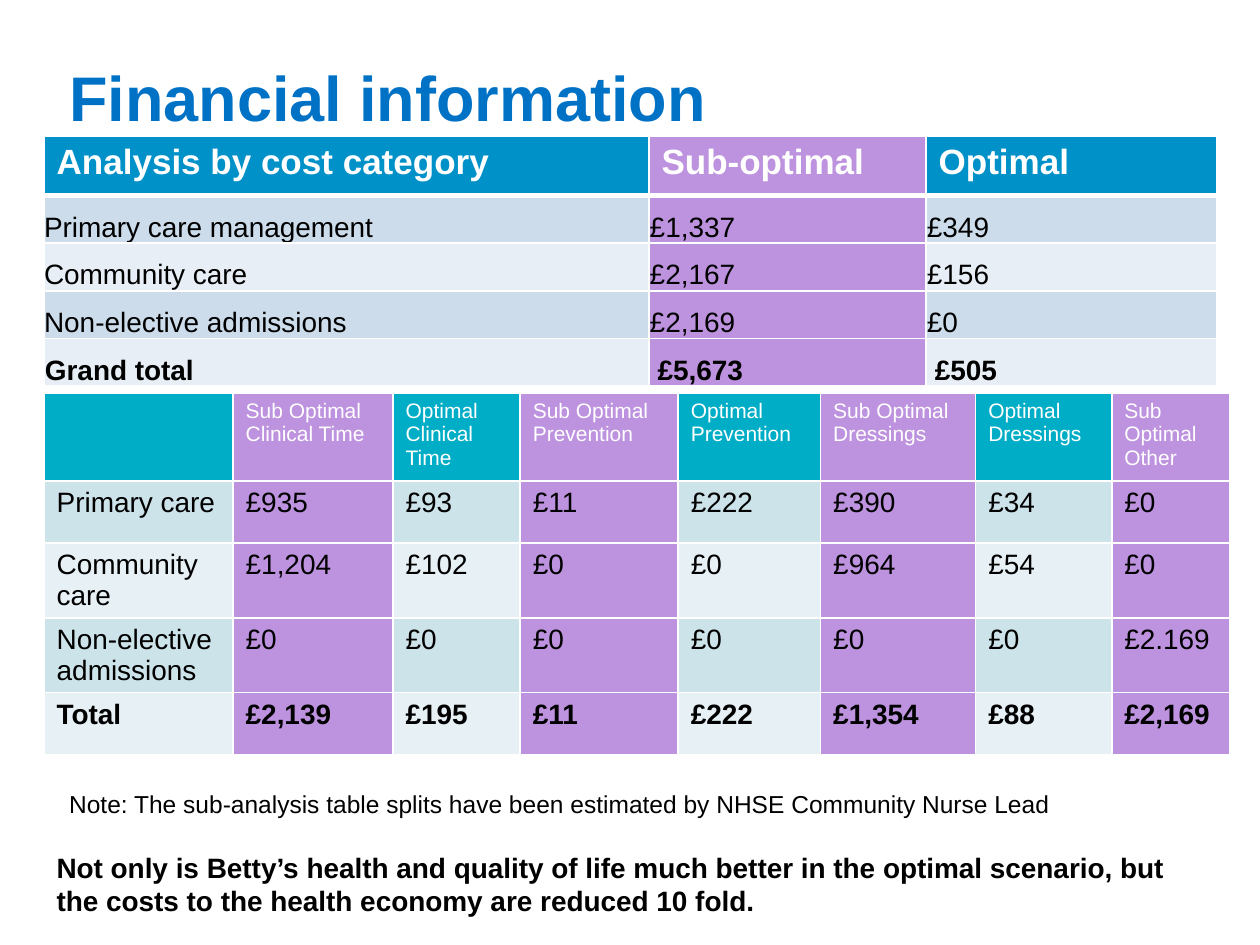
from dataclasses import dataclass

from lxml.etree import SubElement
from pptx import Presentation
from pptx.dml.color import RGBColor
from pptx.enum.text import MSO_ANCHOR, PP_ALIGN
from pptx.oxml.ns import qn
from pptx.util import Pt


@dataclass(frozen=True)
class Theme:
    face: str = "Arial"
    title: str = "0072C6"
    blue: str = "0091C9"
    teal: str = "00ADC6"
    lilac: str = "BD92DE"
    blues: tuple = ("CCDCEB", "E7EEF5")
    teals: tuple = ("CCE3EA", "E7F1F5")
    white: str = "FFFFFF"
    black: str = "000000"
    huge: int = 36
    large: int = 20
    mid: int = 16
    note: int = 14
    small: int = 12


T = Theme()

COSTS = [
    ["Analysis by cost category", "Sub-optimal", "Optimal"],
    ["Primary care management", "£1,337", "£349"],
    ["Community care", "£2,167", "£156"],
    ["Non-elective admissions", "£2,169", "£0"],
    ["Grand total", "£5,673", "£505"],
]
SPLITS = [
    ["", "Sub Optimal Clinical Time", "Optimal Clinical Time",
     "Sub Optimal Prevention", "Optimal Prevention",
     "Sub Optimal Dressings", "Optimal Dressings", "Sub Optimal Other"],
    ["Primary care", "£935", "£93", "£11", "£222", "£390", "£34", "£0"],
    ["Community care", "£1,204", "£102", "£0", "£0", "£964", "£54", "£0"],
    ["Non-elective admissions", "£0", "£0", "£0", "£0", "£0", "£0", "£2.169"],
    ["Total", "£2,139", "£195", "£11", "£222", "£1,354", "£88", "£2,169"],
]


def assign(item, **form):
    for name, value in form.items():
        setattr(item, name, value)


def write(frame, text, size, color, bold=False):
    para = frame.paragraphs[0]
    para.alignment = PP_ALIGN.LEFT
    font = para.font
    if text:
        run = para.add_run()
        run.text = text
        font = run.font
    assign(font, name=T.face, size=Pt(size), bold=bold)
    font.color.rgb = RGBColor.from_string(color)


def place(shape, left, top, width, height):
    assign(shape, left=Pt(left), top=Pt(top), width=Pt(width), height=Pt(height))


def add_title(slide, text):
    shape = slide.shapes.title
    place(shape, 32.4, 28.8, 579.6, 52.6)
    shape.text_frame.vertical_anchor = MSO_ANCHOR.MIDDLE
    write(shape.text_frame, text, T.huge, T.title, True)


def add_text(slide, box, text, size, bold=False):
    frame = slide.shapes.add_textbox(*map(Pt, box)).text_frame
    frame.word_wrap = True
    write(frame, text, size, T.black, bold)


def edge(cell, **sides):
    props = cell._tc.get_or_add_tcPr()
    for side, width in sides.items():
        line = SubElement(props, qn(f"a:ln{side}"), w=str(Pt(width)))
        fill = SubElement(line, qn("a:solidFill"))
        SubElement(fill, qn("a:srgbClr"), val=T.white)


def add_grid(slide, spot, cols, rows, data, head, bands, size, rule):
    area = (*spot, sum(cols), sum(rows))
    table = slide.shapes.add_table(len(rows), len(cols), *map(Pt, area)).table
    for col, width in zip(table.columns, cols):
        col.width = Pt(width)
    for row, height in zip(table.rows, rows):
        row.height = Pt(height)
    last = len(rows) - 1
    for r, line in enumerate(data):
        for c, text in enumerate(line):
            cell = table.cell(r, c)
            edge(cell, L=1, R=1, T=rule if r == 1 else 1, B=rule if r == 0 else 1)
            base = head if r == 0 else bands[(r - 1) % 2]
            cell.fill.solid()
            cell.fill.fore_color.rgb = RGBColor.from_string(T.lilac if c % 2 else base)
            if r == 0:
                write(cell.text_frame, text, size, T.white, size == T.large)
            else:
                write(cell.text_frame, text, T.mid, T.black, r == last)
    return table


def tighten(table):
    last = len(table.rows) - 1
    for r in range(1, last + 1):
        for c in range(len(table.columns)):
            left = 5 if r == last and c else 0.5 if r == last or c else 0
            assign(table.cell(r, c), margin_left=Pt(left), margin_right=Pt(0.5),
                   margin_top=Pt(0.5), margin_bottom=Pt(0),
                   vertical_anchor=MSO_ANCHOR.BOTTOM)


def main():
    deck = Presentation()
    assign(deck, slide_width=Pt(720), slide_height=Pt(540))
    slide = deck.slides.add_slide(deck.slide_layouts[5])
    add_title(slide, "Financial information")
    costs = add_grid(slide, (25.2, 78), (345.6, 158.4, 166.3),
                     (33.8, *[27.2] * 4), COSTS, T.blue, T.blues, T.large, 3)
    tighten(costs)
    add_grid(slide, (25.2, 224.6), (108, 91.4, 72.7, 90.3, 81.4, 88.6, 77.8, 67.7),
             (50.4, 35.3, 36, 36, 35.3), SPLITS, T.teal, T.teals, T.small, 1)
    add_text(slide, (25.2, 482.4, 671, 46),
             "Not only is Betty’s health and quality of life much better in the optimal "
             "scenario, but the costs to the health economy are reduced 10 fold.",
             T.mid, True)
    add_text(slide, (32.4, 447.1, 658, 24.5),
             "Note: The sub-analysis table splits have been estimated by "
             "NHSE Community Nurse Lead", T.note)
    deck.save("out.pptx")


if __name__ == "__main__":
    main()
